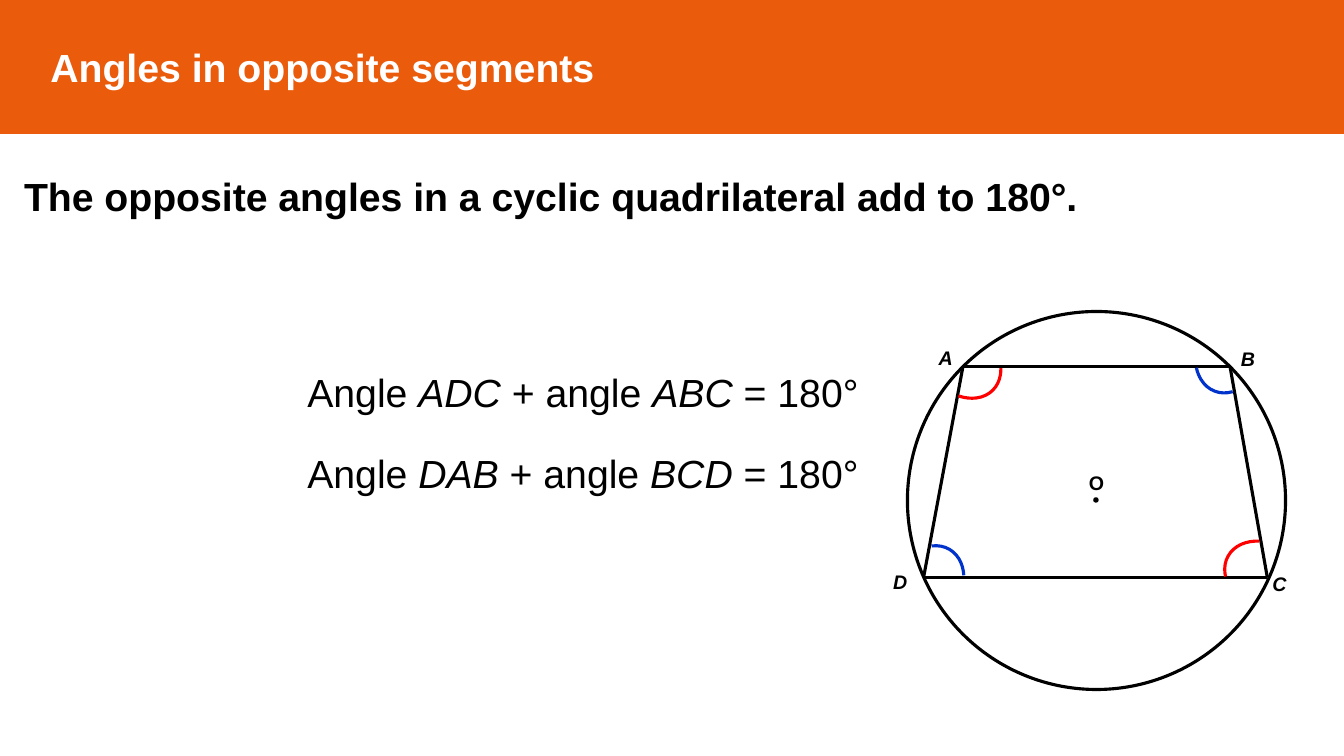
import pptx
import pptx.util
import pptx.dml.color
import pptx.enum.shapes
import pptx.enum.text
import pptx.oxml.ns
import lxml.etree

Inches = pptx.util.Inches
Pt = pptx.util.Pt
RGBColor = pptx.dml.color.RGBColor
AutoShape = pptx.enum.shapes.MSO_SHAPE

ORANGE = RGBColor(0xEA, 0x5B, 0x0C)
WHITE = RGBColor(0xFF, 0xFF, 0xFF)
BLACK = RGBColor(0x00, 0x00, 0x00)
BLUE = RGBColor(0x00, 0x33, 0xCC)
RED = RGBColor(0xFF, 0x00, 0x00)
FONT = "Arial"

TITLE = "Angles in opposite segments"
THEOREM = "The opposite angles in a cyclic quadrilateral add to 180°."
EQUATIONS = [("ADC", "ABC"), ("DAB", "BCD")]
EQUATION_TOP, EQUATION_STEP = 3.6, 0.81

CIRCLE = (9, 3.09, 3.75, 3.75)
CENTRE_DOT = (10.85, 4.94, 0.04, 0.04)
CENTRE_LABEL = (10.7, 4.62, 0.38, 0.37)
VERTICES = {"A": (9.55, 3.64), "B": (12.2, 3.64), "C": (12.57, 5.73), "D": (9.16, 5.73)}
SIDES = ["AB", "DC", "AD", "BC"]
VERTEX_LABELS = {"A": (9.21, 3.38), "B": (12.21, 3.39), "C": (12.52, 5.62), "D": (8.76, 5.6)}
ARC_SIZE = (0.67, 0.88)
ANGLE_ARCS = [
    (11.87, 3.03, 201, 147.67, 186.77, BLUE),
    (8.86, 5.39, 30.1, 147.67, 186.77, BLUE),
    (9.2, 3.12, 135.1, 142.93, 191.76, RED),
    (12.23, 5.29, 298.9, 145.58, 191.76, RED),
]


def inches(*lengths):
    return [Inches(length) for length in lengths]


def style_font(font, size, color, bold):
    font.name = FONT
    font.size = Pt(size)
    font.color.rgb = color
    font.bold = bold


def add_text(slide, box, pieces, size, bold=True, wrap=True):
    frame = slide.shapes.add_textbox(*inches(*box)).text_frame
    frame.word_wrap = wrap
    frame.auto_size = pptx.enum.text.MSO_AUTO_SIZE.SHAPE_TO_FIT_TEXT
    paragraph = frame.paragraphs[0]
    style_font(paragraph.font, size, BLACK, bold)
    for text, italic in pieces:
        run = paragraph.add_run()
        run.text = text
        style_font(run.font, size, BLACK, bold)
        run.font.italic = italic


def add_outline(slide, kind, box, color, width=2.25):
    shape = slide.shapes.add_shape(kind, *inches(*box))
    shape.shadow.inherit = False
    shape.fill.background()
    shape.line.color.rgb = color
    shape.line.width = Pt(width)
    return shape


def add_side(slide, start, end):
    connector = slide.shapes.add_connector(
        pptx.enum.shapes.MSO_CONNECTOR.STRAIGHT, *inches(*start, *end))
    connector.line.color.rgb = BLACK
    connector.line.width = Pt(2.25)
    properties = connector._element.spPr
    lxml.etree.SubElement(properties, pptx.oxml.ns.qn("a:effectLst"))


def add_title(slide):
    title = slide.shapes.title
    title.left, title.top, title.width, title.height = inches(0, 0, 13.33, 1.32)
    title.fill.solid()
    title.fill.fore_color.rgb = ORANGE
    title.line.color.rgb = ORANGE
    title.line.width = Pt(1)
    frame = title.text_frame
    frame.text = TITLE
    frame.auto_size = pptx.enum.text.MSO_AUTO_SIZE.NONE
    frame.vertical_anchor = pptx.enum.text.MSO_ANCHOR.MIDDLE
    frame.margin_left = Inches(0.5)
    paragraph = frame.paragraphs[0]
    paragraph.alignment = pptx.enum.text.PP_ALIGN.LEFT
    style_font(paragraph.font, 28, WHITE, True)


def add_diagram(slide):
    add_outline(slide, AutoShape.OVAL, CIRCLE, BLACK)
    for start, end in SIDES:
        add_side(slide, VERTICES[start], VERTICES[end])
    dot = add_outline(slide, AutoShape.OVAL, CENTRE_DOT, BLACK, 1)
    dot.fill.solid()
    dot.fill.fore_color.rgb = BLACK
    add_text(slide, CENTRE_LABEL, [("O", False)], 14)
    for name, corner in VERTEX_LABELS.items():
        add_text(slide, (*corner, 0.38, 0.34), [(name, True)], 14)


def add_angle_arcs(slide):
    for left, top, rotation, start, end, color in ANGLE_ARCS:
        arc = add_outline(slide, AutoShape.ARC, (left, top, *ARC_SIZE), color)
        arc.rotation = rotation
        arc.adjustments[0] = start
        arc.adjustments[1] = end


def main():
    presentation = pptx.Presentation()
    presentation.slide_width = Inches(13.33)
    presentation.slide_height = Inches(7.5)
    slide = presentation.slides.add_slide(presentation.slide_layouts[5])
    add_title(slide)
    add_text(slide, (0.14, 1.66, 12.28, 0.88), [(THEOREM, False)], 28)
    add_diagram(slide)
    for row, (first, second) in enumerate(EQUATIONS):
        pieces = [("Angle ", False), (first, True), (" + angle ", False),
                  (second, True), (" = 180°", False)]
        top = EQUATION_TOP + row * EQUATION_STEP
        add_text(slide, (2.95, top, 5.73, 0.57), pieces, 28, bold=False, wrap=False)
    add_angle_arcs(slide)
    presentation.save("out.pptx")


if __name__ == "__main__":
    main()
